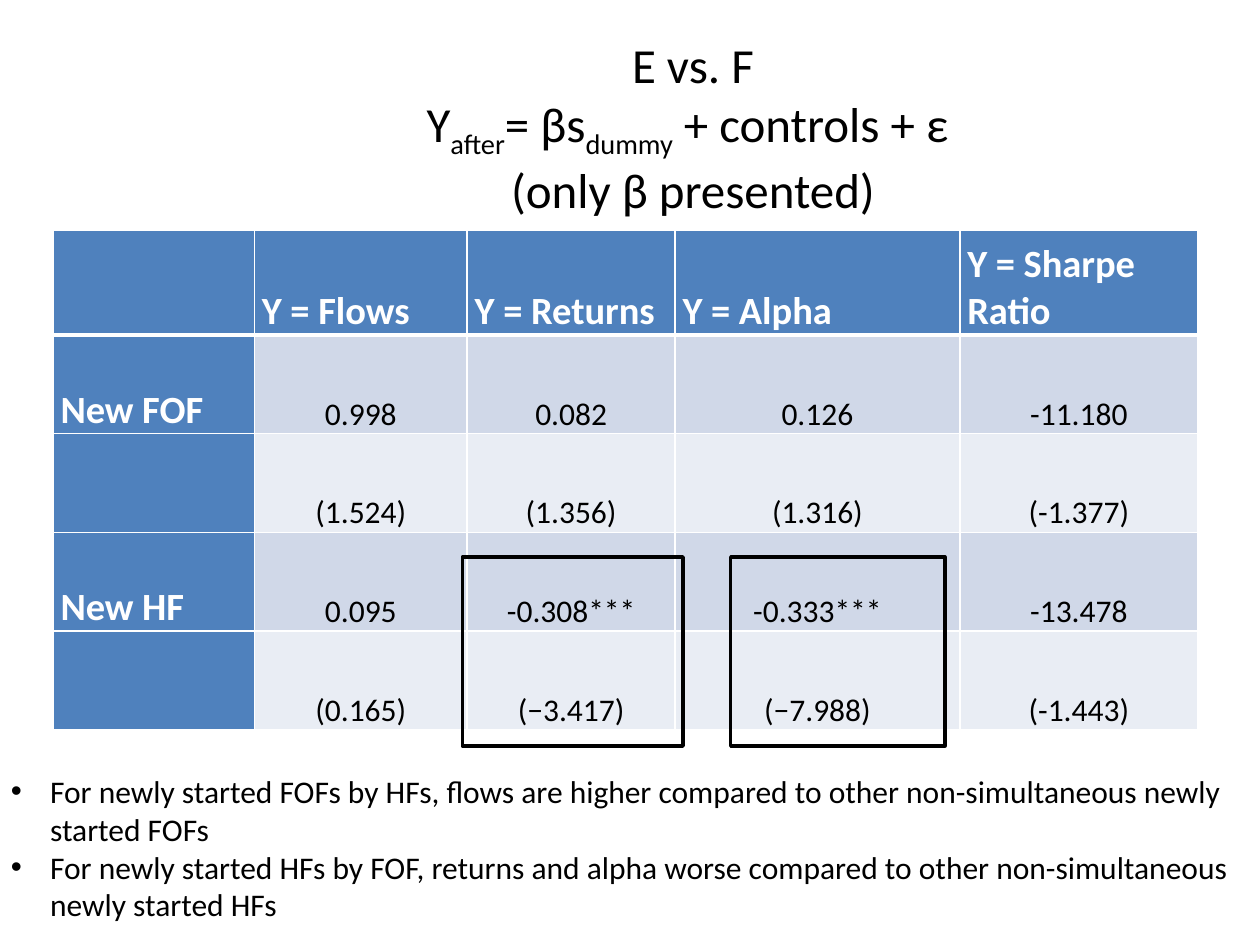
from lxml.etree import SubElement
from pptx import Presentation
from pptx.dml.color import RGBColor
from pptx.enum.shapes import MSO_SHAPE
from pptx.enum.text import MSO_ANCHOR, MSO_AUTO_SIZE, PP_ALIGN
from pptx.oxml.ns import qn
from pptx.util import Cm, Pt

BLUE, WHITE, BLACK = "4F81BD", "FFFFFF", "000000"
BANDS = ["D0D8E8", "E9EDF4"]


def style_font(font, size, color=BLACK, bold=False):
    font.name = "Calibri"
    font.size = Pt(size)
    font.bold = bold
    font.color.rgb = RGBColor.from_string(color)


def add_border(cell, side, points):
    """Draw one white cell border; side is L, R, T or B."""
    line = SubElement(cell._tc.get_or_add_tcPr(), qn(f"a:ln{side}"), w=str(Pt(points)))
    SubElement(SubElement(line, qn("a:solidFill")), qn("a:srgbClr"), val=WHITE)


presentation = Presentation()
presentation.slide_width, presentation.slide_height = Cm(25.4), Cm(19.05)
slide = presentation.slides.add_slide(presentation.slide_layouts[6])

# Title with the regression equation
title = slide.shapes.add_textbox(Cm(1.27), Cm(0.43), Cm(25.4), Cm(4.24))
title.text_frame.word_wrap = True
title.text_frame.vertical_anchor = MSO_ANCHOR.MIDDLE
paragraph = title.text_frame.paragraphs[0]
paragraph.alignment = PP_ALIGN.CENTER
title_lines = [
    [("E vs. F", False)],
    [("Y", False), ("after", True), ("= βs", False), ("dummy", True),
     (" + controls + ε ", False)],
    [("(only β presented)", False)],
]
for line_index, title_line in enumerate(title_lines):
    if line_index:
        paragraph.add_line_break()
    for text, is_subscript in title_line:
        run = paragraph.add_run()
        run.text = text
        style_font(run.font, 28)
        if is_subscript:
            run.font._element.set("baseline", "-25000")

# Regression results
results = [
    ["", "Y = Flows", "Y = Returns", "Y = Alpha", "Y = Sharpe Ratio"],
    ["New FOF", "0.998", "0.082", "0.126", "-11.180"],
    ["", "(1.524)", "(1.356)", "(1.316)", "(-1.377)"],
    ["New HF", "0.095", "-0.308***", "-0.333***", "-13.478"],
    ["", "(0.165)", "(−3.417)", "(−7.988)", "(-1.443)"],
]
column_widths = [4.06, 4.29, 4.19, 5.74, 4.8]
row_heights = [2.1] + [1.99] * 4
table = slide.shapes.add_table(
    len(results), len(column_widths), Cm(1.07), Cm(4.65),
    Cm(sum(column_widths)), Cm(sum(row_heights))).table
table.first_col = True
for column, width in zip(table.columns, column_widths):
    column.width = Cm(width)
for row, height in zip(table.rows, row_heights):
    row.height = Cm(height)

for row_index, values in enumerate(results):
    for column_index, value in enumerate(values):
        cell = table.cell(row_index, column_index)
        is_heading = row_index == 0 or column_index == 0
        for side in "LRTB":
            is_header_rule = (row_index, side) in [(0, "B"), (1, "T")]
            add_border(cell, side, 3 if is_header_rule else 1)
        cell.fill.solid()
        cell.fill.fore_color.rgb = RGBColor.from_string(
            BLUE if is_heading else BANDS[(row_index - 1) % 2])
        cell.vertical_anchor = MSO_ANCHOR.BOTTOM
        cell.margin_left = cell.margin_right = Cm(0.15 if is_heading else 0.18)
        cell.margin_top = cell.margin_bottom = 0
        if value:
            cell.text_frame.text = value
            paragraph = cell.text_frame.paragraphs[0]
            paragraph.alignment = PP_ALIGN.LEFT if is_heading else PP_ALIGN.CENTER
            if is_heading:
                style_font(paragraph.runs[0].font, 22, WHITE, bold=True)
            else:
                style_font(paragraph.runs[0].font, 18)

# Conclusions
conclusions = slide.shapes.add_textbox(Cm(-0.03), Cm(15.44), Cm(25.4), Cm(3.33))
conclusions.text_frame.word_wrap = True
conclusions.text_frame.auto_size = MSO_AUTO_SIZE.SHAPE_TO_FIT_TEXT
conclusions.text_frame.text = "\n".join([
    "For newly started FOFs by HFs, flows are higher compared to other "
    "non-simultaneous newly started FOFs",
    "For newly started HFs by FOF, returns and alpha worse compared to other "
    "non-simultaneous newly started HFs",
])
for paragraph in conclusions.text_frame.paragraphs:
    style_font(paragraph.runs[0].font, 18)
    properties = paragraph._p.get_or_add_pPr()
    properties.set("marL", str(Cm(0.79)))
    properties.set("indent", str(Cm(-0.79)))
    SubElement(properties, qn("a:buFont"), typeface="Arial")
    SubElement(properties, qn("a:buChar"), char="•")

# Frames around the significant coefficients
for left, width in [(9.32, 4.45), (14.73, 4.32)]:
    frame = slide.shapes.add_shape(
        MSO_SHAPE.RECTANGLE, Cm(left), Cm(11.23), Cm(width), Cm(3.81))
    frame.shadow.inherit = False
    frame.fill.background()
    frame.line.color.rgb = RGBColor.from_string(BLACK)
    frame.line.width = Pt(2)

presentation.save("out.pptx")
